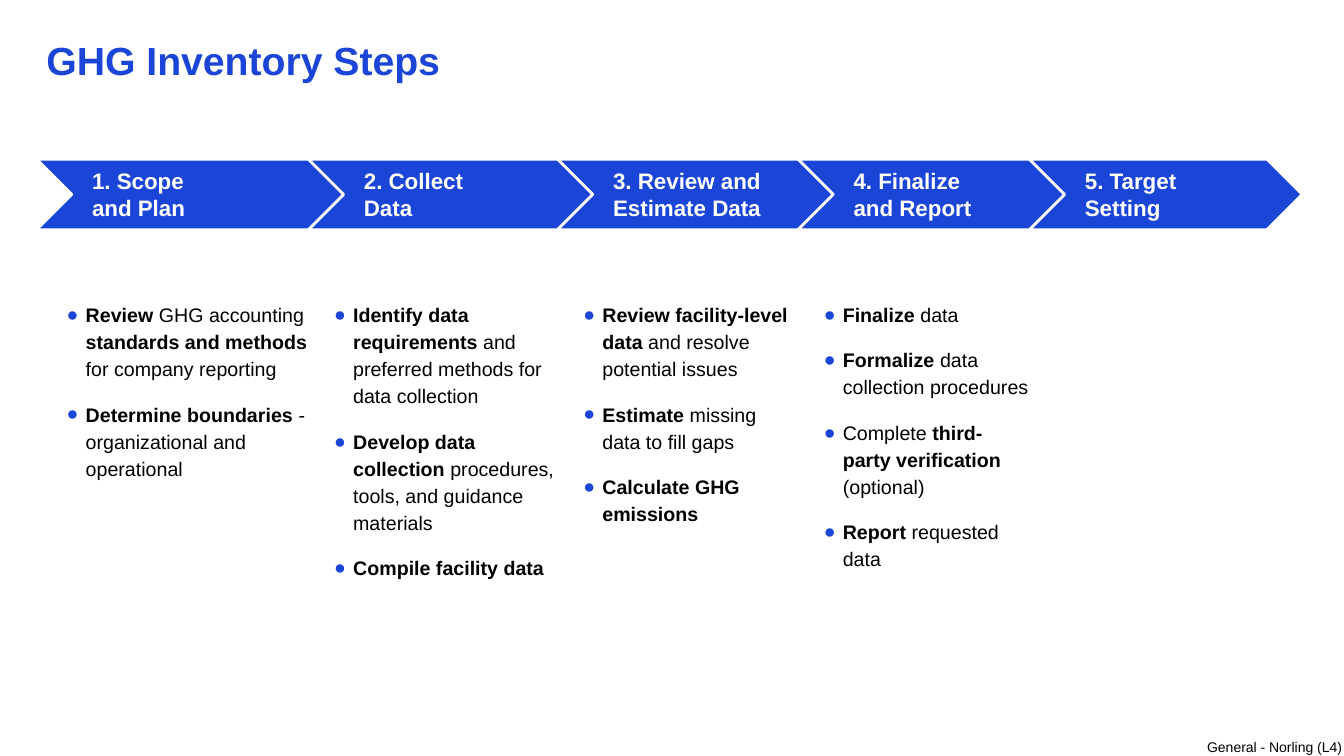
from pptx import Presentation
from pptx.dml.color import RGBColor
from pptx.enum.shapes import MSO_SHAPE as Shape
from pptx.enum.text import MSO_ANCHOR as Anchor, MSO_AUTO_SIZE as AutoSize, PP_ALIGN as Align
from pptx.oxml.ns import qn
from pptx.util import Cm, Pt
from lxml.etree import SubElement

COLORS = {"blue": "1A45D7", "black": "000000", "white": "FFFFFF"}
FONT = "Arial"
COMPARISON_LAYOUT = 4  # a title and four body placeholders

# Chevron text, left and width in cm
STEPS = [
    ("1. Scope\nand Plan", 0.92, 8.26),
    ("2. Collect\nData", 7.77, 7.47),
    ("3. Review and Estimate Data", 14.05, 7.54),
    ("4. Finalize\nand Report", 20.11, 6.99),
    ("5. Target Setting", 25.94, 6.88),
]

# Column left, width and height in cm, then its items; ** surrounds bold words
COLUMNS = [
    (1.27, 6.73, 4.8, [
        "**Review** GHG accounting **standards and methods **for company reporting",
        "**Determine boundaries **- organizational and operational",
    ]),
    (8.01, 6.28, 7.32, [
        "**Identify data requirements **and preferred methods for data collection",
        "**Develop data collection **procedures, tools, and guidance materials",
        "**Compile facility data**",
    ]),
    (14.29, 6.07, 5.94, [
        "**Review facility-level data **and resolve potential issues",
        "**Estimate** missing data to fill gaps",
        "**Calculate GHG emissions**",
    ]),
    (20.35, 5.84, 7.09, [
        "**Finalize** data",
        "**Formalize** data collection procedures",
        "Complete **third-party verification **(optional)",
        "**Report** requested data",
    ]),
]


def color(name):
    return RGBColor.from_string(COLORS[name])


class StepsSlide:
    """Holds the style and the current slide."""

    def __init__(self, deck):
        self.slide = deck.slides.add_slide(deck.slide_layouts[COMPARISON_LAYOUT])
        self.bodies = [holder for holder in self.slide.placeholders
                       if holder.placeholder_format.idx > 0]

    def place(self, box, left, top, width, height):
        box.left, box.top = Cm(left), Cm(top)
        box.width, box.height = Cm(width), Cm(height)

    def set_frame(self, frame, margins, anchor=Anchor.TOP):
        frame.auto_size = AutoSize.NONE
        frame.word_wrap = True
        frame.vertical_anchor = anchor
        (frame.margin_left, frame.margin_top,
         frame.margin_right, frame.margin_bottom) = map(Cm, margins)

    def style(self, span, size, shade, bold=False):
        span.font.name, span.font.size, span.font.bold = FONT, Pt(size), bold
        span.font.color.rgb = color(shade)

    def style_frame(self, frame, size, shade, bold=False, align=Align.LEFT):
        for para in frame.paragraphs:
            para.alignment = align
            for span in para.runs:
                self.style(span, size, shade, bold)

    def title(self, text, *place):
        box = self.slide.shapes.title
        self.place(box, *place)
        frame = box.text_frame
        self.set_frame(frame, (0, 0, 0, 0))
        frame.text = text
        frame.paragraphs[0].line_spacing = 0.9
        self.style_frame(frame, 28, "blue", bold=True)

    def label(self, text, *place):
        box = self.slide.shapes.add_textbox(*map(Cm, place))
        self.set_frame(box.text_frame, (0, 0, 0, 0))
        box.text_frame.text = text
        self.style_frame(box.text_frame, 10, "black", align=Align.RIGHT)

    def chevrons(self, steps, top, height):
        group = self.slide.shapes.add_group_shape()
        for text, left, width in steps:
            chevron = group.shapes.add_shape(
                Shape.CHEVRON, Cm(left), Cm(top), Cm(width), Cm(height))
            chevron.shadow.inherit = False
            chevron.fill.solid()
            chevron.fill.fore_color.rgb = color("blue")
            chevron.line.color.rgb = color("white")
            chevron.line.width = Pt(2)
            self.set_frame(chevron.text_frame, (0.51, 0.13, 0.25, 0.13), Anchor.MIDDLE)
            chevron.text_frame.text = text
            self.style_frame(chevron.text_frame, 16, "white", bold=True)

    def bullet(self, para):
        props = para._p.get_or_add_pPr()
        props.set("marL", str(Cm(0.64)))
        props.set("indent", str(-Cm(0.48)))
        tint = SubElement(props, qn("a:buClr"))
        SubElement(tint, qn("a:srgbClr"), val=COLORS["blue"])
        SubElement(props, qn("a:buFont"), typeface=FONT)
        SubElement(props, qn("a:buChar"), char="●")

    def bullet_list(self, box, items, *place):
        self.place(box, *place)
        frame = box.text_frame
        self.set_frame(frame, (0.25, 0.13, 0.25, 0.13))
        for number, item in enumerate(items):
            para = frame.add_paragraph() if number else frame.paragraphs[0]
            para.level = 1
            self.bullet(para)
            para.alignment = Align.LEFT
            para.line_spacing = 1.15
            para.space_before = Pt(3 if number else 0)
            para.space_after = Pt(10)
            for part, words in enumerate(item.split("**")):
                if words:
                    span = para.add_run()
                    span.text = words
                    self.style(span, 14, "black", bold=part % 2 == 1)


def main():
    deck = Presentation()
    deck.slide_width, deck.slide_height = Cm(33.87), Cm(19.05)
    page = StepsSlide(deck)

    # Title and classification label
    page.title("GHG Inventory Steps", 1.17, 1.04, 31.39, 1.9)
    page.label("General - Norling (L4)", 29.8, 18.62, 4.02, 0.43)

    # Process arrows
    page.chevrons(STEPS, top=4.01, height=1.78)

    # Tasks under the arrows
    for box, (left, width, height, items) in zip(page.bodies, COLUMNS):
        page.bullet_list(box, items, left, 7.42, width, height)

    deck.save("out.pptx")


if __name__ == "__main__":
    main()
